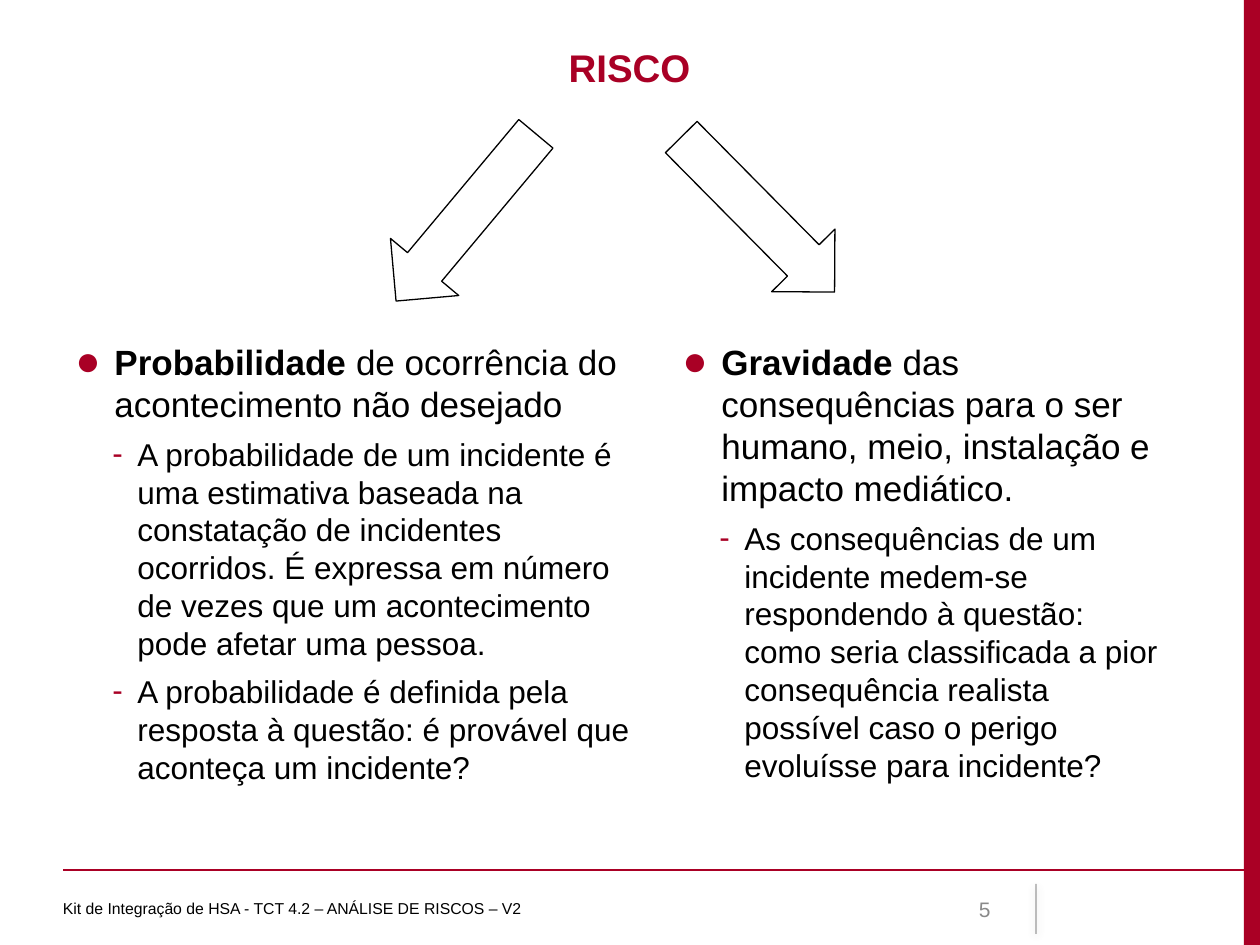
from lxml.etree import SubElement
from pptx import Presentation
from pptx.dml.color import RGBColor
from pptx.enum.shapes import MSO_CONNECTOR, MSO_SHAPE
from pptx.enum.text import MSO_ANCHOR, PP_ALIGN
from pptx.oxml.ns import qn
from pptx.util import Pt

SCALE = 914400 / 126  # EMU in one px
RED, BLACK, GREY = "AA0025", "000000", "898989"
TITLE_RED = "A90025"

# Paragraph formats by level: bullet, indents in px, text size in points
LEVELS = [
    {"bullet": "●", "bullet_size": 120, "left": 39, "hang": 39, "size": 20},
    {"bullet": "-", "bullet_size": 100, "left": 62, "hang": 25, "size": 18},
]

PROBABILITY = [
    (0, "Probabilidade", " de ocorrência do acontecimento não desejado"),
    (1, "", "A probabilidade de um incidente é uma estimativa baseada na "
            "constatação de incidentes ocorridos. É expressa em número de "
            "vezes que um acontecimento pode afetar uma pessoa."),
    (1, "", "A probabilidade é definida pela resposta à questão: é provável "
            "que aconteça um incidente?"),
]
SEVERITY = [
    (0, "Gravidade", " das consequências para o ser humano, meio, "
                     "instalação e impacto mediático."),
    (1, "", "As consequências de um incidente medem-se respondendo à "
            "questão: como seria classificada a pior consequência realista "
            "possível caso o perigo evoluísse para incidente?"),
]


def px(value):
    return round(value * SCALE)


def rgb(value):
    return RGBColor.from_string(value)


def apply(target, formats):
    for name, value in formats.items():
        setattr(target, name, value)


def add_span(para, text, size, color=BLACK, bold=False):
    span = para.add_run()
    span.text = text
    apply(span.font, {"name": "Arial", "size": Pt(size), "bold": bold})
    span.font.color.rgb = rgb(color)


def add_box(page, place, **formats):
    box = page.shapes.add_textbox(*map(px, place))
    apply(box.text_frame, {"word_wrap": True, **formats})
    return box.text_frame


def add_label(page, place, text, size, color=BLACK, bold=False,
              align=PP_ALIGN.LEFT, **formats):
    para = add_box(page, place, **formats).paragraphs[0]
    para.alignment = align
    add_span(para, text, size, color, bold)


def set_bullet(para, level):
    properties = para._p.get_or_add_pPr()
    properties.set("marL", str(px(level["left"])))
    properties.set("indent", str(-px(level["hang"])))
    color = SubElement(properties, qn("a:buClr"))
    SubElement(color, qn("a:srgbClr"), val=TITLE_RED)
    SubElement(properties, qn("a:buSzPct"),
               val=str(level["bullet_size"] * 1000))
    SubElement(properties, qn("a:buFont"), typeface="Arial")
    SubElement(properties, qn("a:buChar"), char=level["bullet"])


def add_bullets(page, place, items):
    frame = add_box(page, place)
    for index, (depth, lead, text) in enumerate(items):
        para = frame.add_paragraph() if index else frame.paragraphs[0]
        level = LEVELS[depth]
        set_bullet(para, level)
        apply(para, {"level": depth, "space_after": Pt(3)})
        if index:
            para.space_before = Pt(3)
        if lead:
            add_span(para, lead, level["size"], bold=True)
        add_span(para, text, level["size"])


def add_line(page, start, end, color, width):
    line = page.shapes.add_connector(MSO_CONNECTOR.STRAIGHT,
                                     *map(px, start + end))
    line.line.color.rgb = rgb(color)
    line.line.width = Pt(width)
    effects = SubElement(line._element.spPr, qn("a:effectLst"))
    return line, effects


def add_soft_line(page, start, end):
    line, effects = add_line(page, start, end, BLACK, 0.5)
    color = line._element.spPr.find(".//" + qn("a:srgbClr"))
    SubElement(color, qn("a:alpha"), val="70000")
    shadow = SubElement(effects, qn("a:outerShdw"), blurRad=str(Pt(5)),
                        dist=str(Pt(1.6)), dir="5400000", rotWithShape="0")
    shade = SubElement(shadow, qn("a:srgbClr"), val=BLACK)
    SubElement(shade, qn("a:alpha"), val="38000")


def add_side_bar(page, place):
    bar = page.shapes.add_shape(MSO_SHAPE.RECTANGLE, *map(px, place))
    bar.shadow.inherit = False
    bar.fill.solid()
    bar.fill.fore_color.rgb = rgb(RED)
    bar.line.fill.background()


def add_arrow(page, left, top, rotation):
    arrow = page.shapes.add_shape(MSO_SHAPE.LEFT_ARROW,
                                  *map(px, (left, top, 218, 89)))
    arrow.shadow.inherit = False
    arrow.rotation = rotation
    arrow.fill.background()
    arrow.line.color.rgb = rgb(BLACK)
    arrow.line.width = Pt(0.75)


def main():
    deck = Presentation()
    deck.slide_width, deck.slide_height = px(1260), px(945)
    page = deck.slides.add_slide(deck.slide_layouts[6])

    # Frame of the page
    add_side_bar(page, (1244, 0, 16, 945))
    add_line(page, (63, 870), (1260, 870), RED, 0.75)
    add_soft_line(page, (1036, 884), (1036, 934))

    # Title and the two arrows from it
    add_label(page, (63, 38, 1133, 87), "RISCO", 22, TITLE_RED, True,
              PP_ALIGN.CENTER)
    add_arrow(page, 357, 173, 309.9)
    add_arrow(page, 649, 170, 225.3)

    # Two parts of risk
    add_bullets(page, (63, 334, 586, 496), PROBABILITY)
    add_bullets(page, (670, 334, 508, 496), SEVERITY)

    # Footer
    add_label(page, (63, 883, 766, 50),
              "Kit de Integração de HSA - TCT 4.2 – ANÁLISE DE RISCOS – V2",
              9, margin_left=0, vertical_anchor=MSO_ANCHOR.MIDDLE)
    add_label(page, (903, 884, 100, 50), "5", 12, GREY,
              align=PP_ALIGN.RIGHT, vertical_anchor=MSO_ANCHOR.MIDDLE)

    deck.save("out.pptx")


if __name__ == "__main__":
    main()
